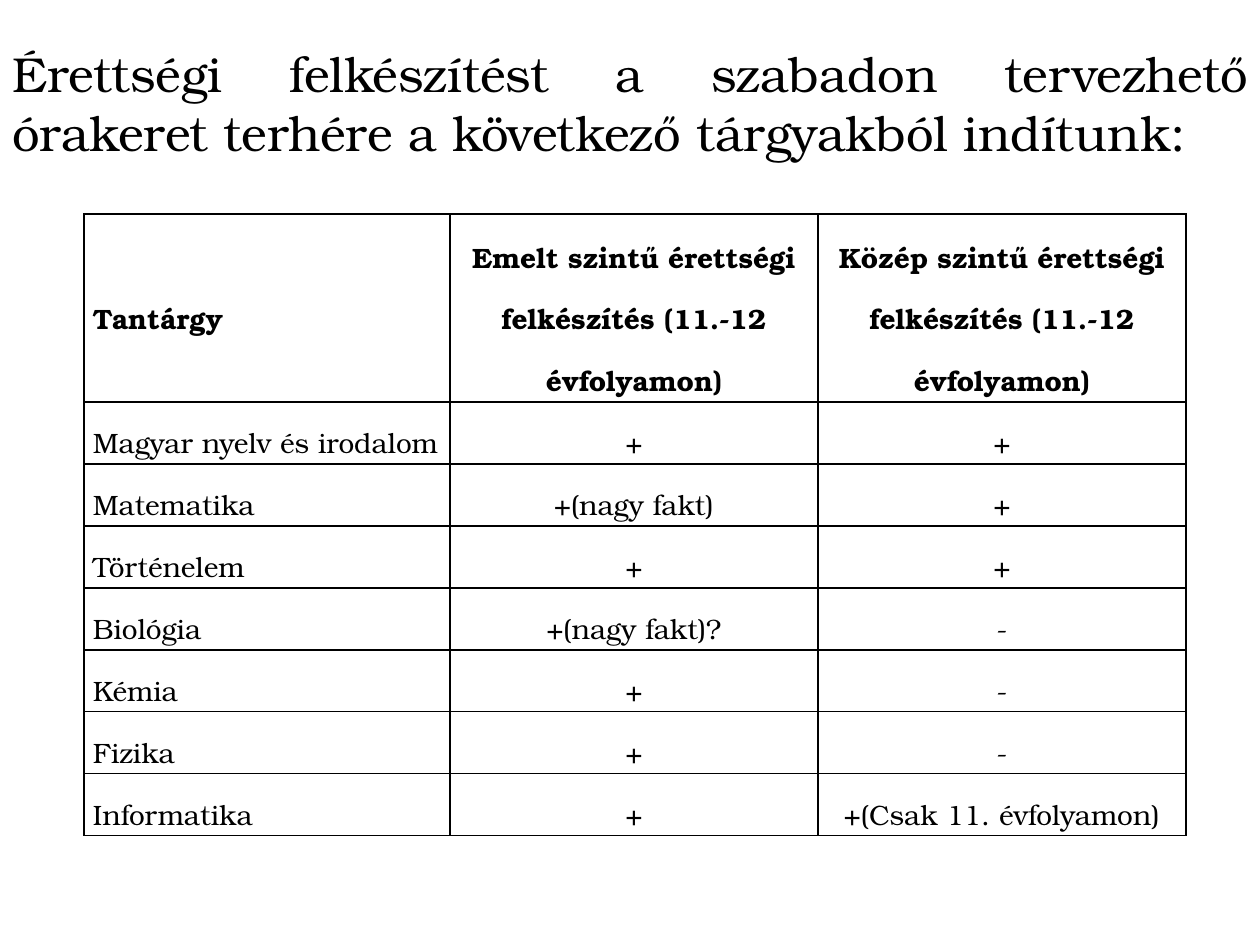
"""Build a slide listing the exam preparation courses by subject and level."""
import pptx
import pptx.dml.color
import pptx.enum.text
import pptx.oxml
import pptx.oxml.ns
import pptx.util

COLORS = {"ink": "000000", "paper": "FFFFFF"}
FONT = "TeX Gyre Bonum"
ALIGN = pptx.enum.text.PP_ALIGN
MIDDLE = pptx.enum.text.MSO_ANCHOR.MIDDLE

TITLE = ("Érettségi felkészítést a szabadon tervezhető órakeret terhére "
         "a következő tárgyakból indítunk:")
ROWS = [
    ("Tantárgy", "Emelt szintű érettségi felkészítés (11.-12 évfolyamon)",
     "Közép szintű érettségi felkészítés (11.-12 évfolyamon)"),
    ("Magyar nyelv és irodalom", "+", "+"),
    ("Matematika", "+(nagy fakt)", "+"),
    ("Történelem", "+", "+"),
    ("Biológia", "+(nagy fakt)?", "-"),
    ("Kémia", "+", "-"),
    ("Fizika", "+", "-"),
    ("Informatika", "+", "+(Csak 11. évfolyamon)"),
]


def px(count):
    return pptx.util.Emu(round(count * 914400 / 126))


def rgb(name):
    return pptx.dml.color.RGBColor.from_string(COLORS[name])


def write(frame, text, size=16, bold=False, align=ALIGN.JUSTIFY, spacing=1.0):
    frame.word_wrap = True
    para = frame.paragraphs[0]
    para.alignment = align
    para.line_spacing = spacing
    run = para.add_run()
    run.text = text
    font = run.font
    font.name = FONT
    font.size = pptx.util.Pt(size)
    font.bold = bold
    font.color.rgb = rgb("ink")


class Deck:
    def __init__(self, width, height):
        self.show = pptx.Presentation()
        self.show.slide_width = px(width)
        self.show.slide_height = px(height)
        self.slide = self.show.slides.add_slide(self.show.slide_layouts[6])
        fill = self.slide.background.fill
        fill.solid()
        fill.fore_color.rgb = rgb("paper")

    def title(self, text, left, top, width, height):
        box = self.slide.shapes.add_textbox(
            px(left), px(top), px(width), px(height))
        box.text_frame.vertical_anchor = MIDDLE
        write(box.text_frame, text, size=28)

    def border(self, cell):
        props = cell._tc.get_or_add_tcPr()
        space = pptx.oxml.ns.nsdecls("a")
        for spot, side in enumerate("LRTB"):
            props.insert(spot, pptx.oxml.parse_xml(
                f'<a:ln{side} {space} w="{pptx.util.Pt(1)}"><a:solidFill>'
                f'<a:srgbClr val="{COLORS["ink"]}"/></a:solidFill></a:ln{side}>'))

    def table(self, rows, left, top, widths, heights):
        grid = self.slide.shapes.add_table(
            len(rows), len(widths), px(left), px(top),
            px(sum(widths)), px(sum(heights))).table
        grid.first_row = grid.horz_banding = False
        for col, width in zip(grid.columns, widths):
            col.width = px(width)
        for row, height in zip(grid.rows, heights):
            row.height = px(height)
        for r, texts in enumerate(rows):
            for c, text in enumerate(texts):
                cell = grid.cell(r, c)
                cell.fill.background()
                cell.vertical_anchor = MIDDLE
                cell.margin_left = cell.margin_right = px(9)
                cell.margin_top = cell.margin_bottom = 0
                write(cell.text_frame, text, bold=r == 0, spacing=1.5,
                      align=ALIGN.CENTER if c else ALIGN.JUSTIFY)
                self.border(cell)

    def save(self):
        self.show.save("out.pptx")


def main():
    deck = Deck(1260, 945)
    deck.table(ROWS, 84, 214, [366, 368, 368], [188] + [62] * 7)
    deck.title(TITLE, 0, 37, 1260, 131)
    deck.save()


if __name__ == "__main__":
    main()
